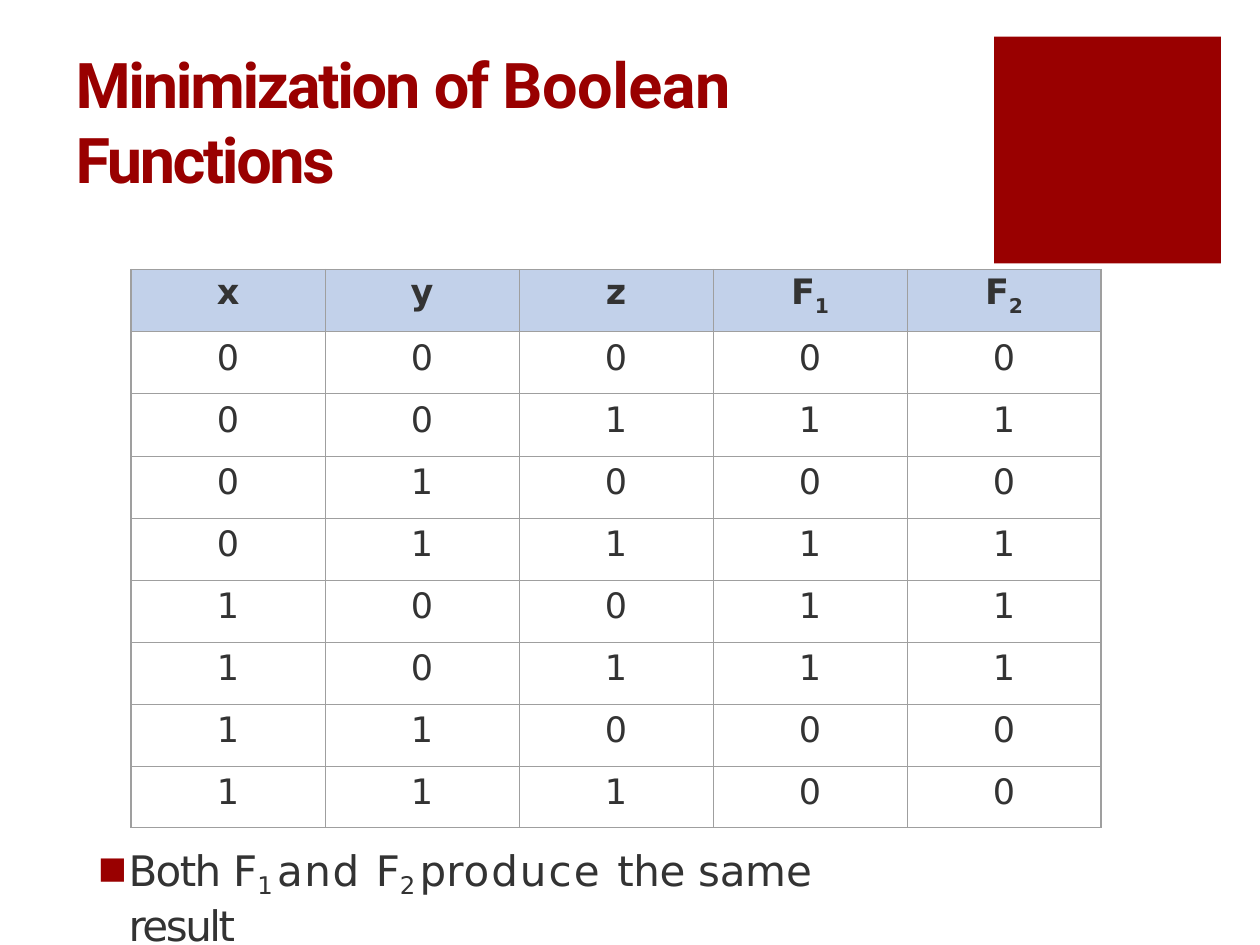
from itertools import product

from lxml.etree import SubElement
from pptx import Presentation
from pptx.dml.color import RGBColor
from pptx.enum.shapes import MSO_SHAPE as Shape
from pptx.enum.text import MSO_ANCHOR as Anchor, PP_ALIGN as Align
from pptx.oxml.ns import qn
from pptx.util import Inches, Pt

COLORS = {"accent": "990000", "text": "333333", "header": "C2D1EA", "grid": "9F9F9F"}
TITLE = [("Minimization ", -1.3), ("of ", -1.5), ("Boolean ", -0.3), ("Functions", -1.4)]
CAPTION = [("Both ", -0.9), ("F", -2.1), ("1 ", -2, -21), ("and ", 0.9), ("F", -2.2),
           ("2 ", -2, -21), ("p", -1), ("r", -0.8), ("oduce ", 1.2), ("the sam", -0.2),
           ("e ", -0.1), ("result", -1.4)]
HEADINGS = [[("x",)], [("y",)], [("z",)], [("F",), ("1", 0, -26)], [("F",), ("2", 0, -26)]]


def color(name):
    """Return the named colour."""
    return RGBColor.from_string(COLORS[name])


def add_spans(para, spans, size, font="DejaVu Sans", tint="text", bold=False):
    """Add (text, letter spacing, baseline percent) spans in one style."""
    for text, spacing, baseline in ((*span, 0, 0)[:3] for span in spans):
        span = para.add_run()
        span.text = text
        span.font.size, span.font.name, span.font.bold = Pt(size), font, bold
        span.font.color.rgb = color(tint)
        properties = span.font._element
        properties.set("spc", str(round(spacing * 100)))
        properties.set("baseline", str(baseline * 1000))


def add_text_box(page, box, top_margin):
    """Add a wrapping text box and return its first paragraph."""
    frame = page.shapes.add_textbox(*map(Inches, box)).text_frame
    frame.word_wrap = True
    frame.margin_left = frame.margin_right = frame.margin_bottom = 0
    frame.margin_top = Inches(top_margin)
    return frame.paragraphs[0]


def add_accent(page, box):
    """Place the solid corner square."""
    square = page.shapes.add_shape(Shape.RECTANGLE, *map(Inches, box))
    square.shadow.inherit = False
    square.fill.solid()
    square.fill.fore_color.rgb = color("accent")
    square.line.fill.background()


def add_title(page, box):
    """Place the slide heading."""
    para = add_text_box(page, box, 0.03)
    para.line_spacing, para.space_before = Pt(43.1), Pt(2)
    para._p.get_or_add_pPr().set("marL", str(Inches(0.01)))
    add_spans(para, TITLE, 36, "Roboto", "accent", True)


def add_caption(page, box):
    """Place the bulleted conclusion."""
    para = add_text_box(page, box, 0.01)
    para.space_before = Pt(1)
    properties = para._p.get_or_add_pPr()
    properties.set("marL", str(Inches(0.29)))
    properties.set("indent", str(Inches(-0.25)))
    bullet_color = SubElement(properties, qn("a:buClr"))
    SubElement(bullet_color, qn("a:srgbClr"), val=COLORS["accent"])
    SubElement(properties, qn("a:buChar"), char="◾")
    add_spans(para, CAPTION, 24)


def add_borders(cell, outer_sides):
    """Draw the cell borders, heavier on the outer sides."""
    properties = cell._tc.get_or_add_tcPr()
    for position, side in enumerate("LRTB"):
        width = Pt(1 if side in outer_sides else 0.25)
        line = properties.makeelement(qn(f"a:ln{side}"), {"w": str(width)})
        fill = SubElement(line, qn("a:solidFill"))
        SubElement(fill, qn("a:srgbClr"), val=COLORS["grid"])
        properties.insert(position, line)


def truth_rows():
    """List the inputs with the two equal functions, x'z + xy'."""
    for x, y, z in product((0, 1), repeat=3):
        result = int((not x and z) or (x and not y))
        yield [[(str(value),)] for value in (x, y, z, result, result)]


def add_truth_table(page, box):
    """Place the truth table on an even grid."""
    rows = [HEADINGS, *truth_rows()]
    last_row, last_column = len(rows) - 1, len(HEADINGS) - 1
    table = page.shapes.add_table(len(rows), len(HEADINGS), *map(Inches, box)).table
    for row_index, row in enumerate(rows):
        table.rows[row_index].height = Inches(box[3] / len(rows))
        header = row_index == 0
        for column, spans in enumerate(row):
            cell = table.cell(row_index, column)
            cell.margin_left = cell.margin_right = cell.margin_bottom = 0
            cell.margin_top = Inches(0.02 if header else 0.05)
            cell.vertical_anchor = Anchor.TOP
            if header:
                cell.fill.solid()
                cell.fill.fore_color.rgb = color("header")
            else:
                cell.fill.background()
            edges = {"L": column == 0, "R": column == last_column,
                     "T": header, "B": row_index == last_row}
            add_borders(cell, [side for side, outer in edges.items() if outer])
            para = cell.text_frame.paragraphs[0]
            para.alignment = Align.CENTER
            para.space_before = Pt(1.4 if header else 3.6)
            add_spans(para, spans, 20, bold=header)


def main():
    """Build and save the slide."""
    deck = Presentation()
    deck.slide_width, deck.slide_height = Inches(10), Inches(7.5)
    page = deck.slides.add_slide(deck.slide_layouts[6])
    add_accent(page, (7.89, 0.29, 1.8, 1.8))
    add_title(page, (0.59, 0.33, 5.79, 1.23))
    add_caption(page, (0.73, 6.69, 6.59, 0.43))
    add_truth_table(page, (1.04, 2.14, 7.7, 4.43))
    deck.save("out.pptx")


if __name__ == "__main__":
    main()
